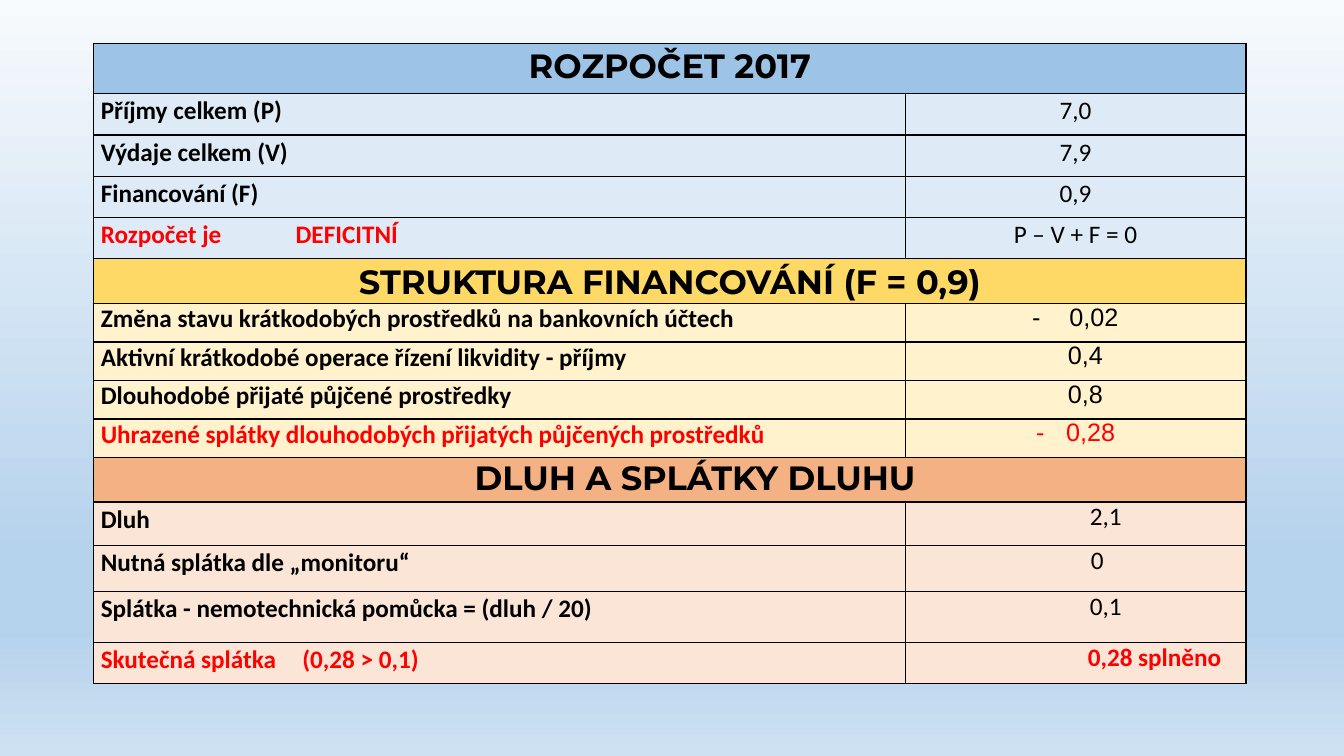
from dataclasses import dataclass

from lxml import etree
from pptx import Presentation
from pptx import util as u
from pptx.dml.color import RGBColor
from pptx.enum import text
from pptx.oxml.ns import qn

COLORS = {
    "black": "000000", "red": "FF0000",
    "blue": "9DC3E6", "pale_blue": "DEEBF7",
    "yellow": "FFD966", "pale_yellow": "FFF2CC",
    "orange": "F4B183", "pale_orange": "FBE5D6",
    "sky_top": "F7FAFD", "sky_deep": "B5D2EC", "sky_bottom": "CEE1F2",
}
SKY = [(0, "sky_top"), (74, "sky_deep"), (83, "sky_deep"), (100, "sky_bottom")]


@dataclass
class Entry:
    label: str
    value: str
    height: float
    label_color: str = "black"
    label_hang: float = 0
    value_color: str = "black"
    value_bold: bool = False
    value_left: float = 0
    value_hang: float = 0


@dataclass
class Section:
    heading: str
    height: float
    fill: str
    body_fill: str
    entries: list[Entry]
    heading_left: float = 0
    heading_spacing: float = 1.07
    label_spacing: float = 1.07
    value_spacing: float = 1.0
    value_font: str = "Calibri"


SECTIONS = [
    Section("ROZPOČET 2017", 1.27, "blue", "pale_blue", [
        Entry("Příjmy celkem (P)", "7,0", 1.04),
        Entry("Výdaje celkem (V)", "7,9", 1.04),
        Entry("Financování (F)", "0,9", 1.04),
        Entry("Rozpočet je\tDEFICITNÍ", "P – V + F = 0", 1.04,
              label_color="red", label_hang=4.91),
    ], value_spacing=1.07),
    Section("STRUKTURA FINANCOVÁNÍ (F = 0,9)", 1.13, "yellow", "pale_yellow", [
        Entry("Změna stavu krátkodobých prostředků na bankovních účtech",
              "-\t0,02", 0.97, value_left=3.96, value_hang=0.94),
        Entry("Aktivní krátkodobé operace řízení likvidity - příjmy",
              "0,4", 0.97, value_left=0.5),
        Entry("Dlouhodobé přijaté půjčené prostředky",
              "0,8", 0.97, value_left=0.5),
        Entry("Uhrazené splátky dlouhodobých přijatých půjčených prostředků",
              "-\t0,28", 0.97, label_color="red", value_color="red",
              value_left=3.88, value_hang=0.76),
    ], label_spacing=1.0, value_font="Arial"),
    Section("DLUH A SPLÁTKY DLUHU", 1.12, "orange", "pale_orange", [
        Entry("Dluh", "2,1", 1.09, value_left=1.52),
        Entry("Nutná splátka dle „monitoru“", "0", 1.17, value_left=1.1),
        Entry("Splátka - nemotechnická pomůcka = (dluh / 20)", "0,1", 1.28,
              value_left=1.52),
        Entry("Skutečná splátka\t(0,28 > 0,1)", "0,28 splněno", 1.04,
              label_color="red", label_hang=5.08, value_color="red",
              value_bold=True, value_left=3.98),
    ], heading_left=1.27, heading_spacing=1.0),
]


def add_color(parent, name: str):
    fill = etree.SubElement(parent, qn("a:solidFill"))
    etree.SubElement(fill, qn("a:srgbClr"), val=COLORS[name])


def paint_background(page) -> None:
    fill = page.background.fill
    fill.gradient()
    fill.gradient_angle = 270
    stops = page._element.find(".//" + qn("a:gsLst"))
    for stop in list(stops):
        stops.remove(stop)
    for percent, name in SKY:
        stop = etree.SubElement(stops, qn("a:gs"), pos=str(percent * 1000))
        etree.SubElement(stop, qn("a:srgbClr"), val=COLORS[name])


def format_cell(cell, fill: str) -> None:
    cell.margin_left = cell.margin_right = u.Cm(0.18)
    cell.margin_top = cell.margin_bottom = 0
    cell.vertical_anchor = text.MSO_ANCHOR.TOP
    properties = cell._tc.get_or_add_tcPr()
    for side in ("lnL", "lnR", "lnT", "lnB"):
        line = etree.SubElement(properties, qn(f"a:{side}"), w=str(u.Pt(1)))
        add_color(line, "black")
    cell.fill.solid()
    cell.fill.fore_color.rgb = RGBColor.from_string(COLORS[fill])


def write(cell, content: str, *, font: str = "Calibri", size: float = 18,
          bold: bool = True, color: str = "black", centered: bool = False,
          spacing: float = 1.0, left: float = 0, hang: float = 0) -> None:
    para = cell.text_frame.paragraphs[0]
    para.alignment = text.PP_ALIGN.CENTER if centered else text.PP_ALIGN.LEFT
    para.line_spacing = spacing
    properties = para._p.get_or_add_pPr()
    properties.set("marL", str(u.Cm(left)))
    properties.set("indent", str(u.Cm(-hang)))
    span = para.add_run()
    span.text = content
    span.font.name = font
    span.font.size = u.Pt(size)
    span.font.bold = bold
    span.font.color.rgb = RGBColor.from_string(COLORS[color])


def draw_heading(table, row: int, section: Section) -> None:
    table.rows[row].height = u.Cm(section.height)
    for column in range(2):
        format_cell(table.cell(row, column), section.fill)
    table.cell(row, 0).merge(table.cell(row, 1))
    write(table.cell(row, 0), section.heading, font="Montserrat", size=24,
          centered=True, spacing=section.heading_spacing,
          left=section.heading_left)


def draw_entry(table, row: int, section: Section, entry: Entry) -> None:
    table.rows[row].height = u.Cm(entry.height)
    label, value = table.cell(row, 0), table.cell(row, 1)
    for cell in (label, value):
        format_cell(cell, section.body_fill)
    write(label, entry.label, color=entry.label_color,
          spacing=section.label_spacing,
          left=entry.label_hang, hang=entry.label_hang)
    write(value, entry.value, font=section.value_font, bold=entry.value_bold,
          color=entry.value_color, centered=not entry.value_hang,
          spacing=section.value_spacing,
          left=entry.value_left, hang=entry.value_hang)


def main() -> None:
    deck = Presentation()
    deck.slide_width, deck.slide_height = u.Cm(33.87), u.Cm(19.05)
    page = deck.slides.add_slide(deck.slide_layouts[6])
    paint_background(page)

    row_count = sum(1 + len(section.entries) for section in SECTIONS)
    table = page.shapes.add_table(row_count, 2, u.Cm(2.36), u.Cm(1.09),
                                  u.Cm(29.04), u.Cm(16.1)).table
    table.first_row = table.horz_banding = False
    table.columns[0].width = u.Cm(20.45)
    table.columns[1].width = u.Cm(8.59)

    row = 0
    for section in SECTIONS:
        draw_heading(table, row, section)
        for row, entry in enumerate(section.entries, row + 1):
            draw_entry(table, row, section, entry)
        row += 1

    deck.save("out.pptx")


if __name__ == "__main__":
    main()
